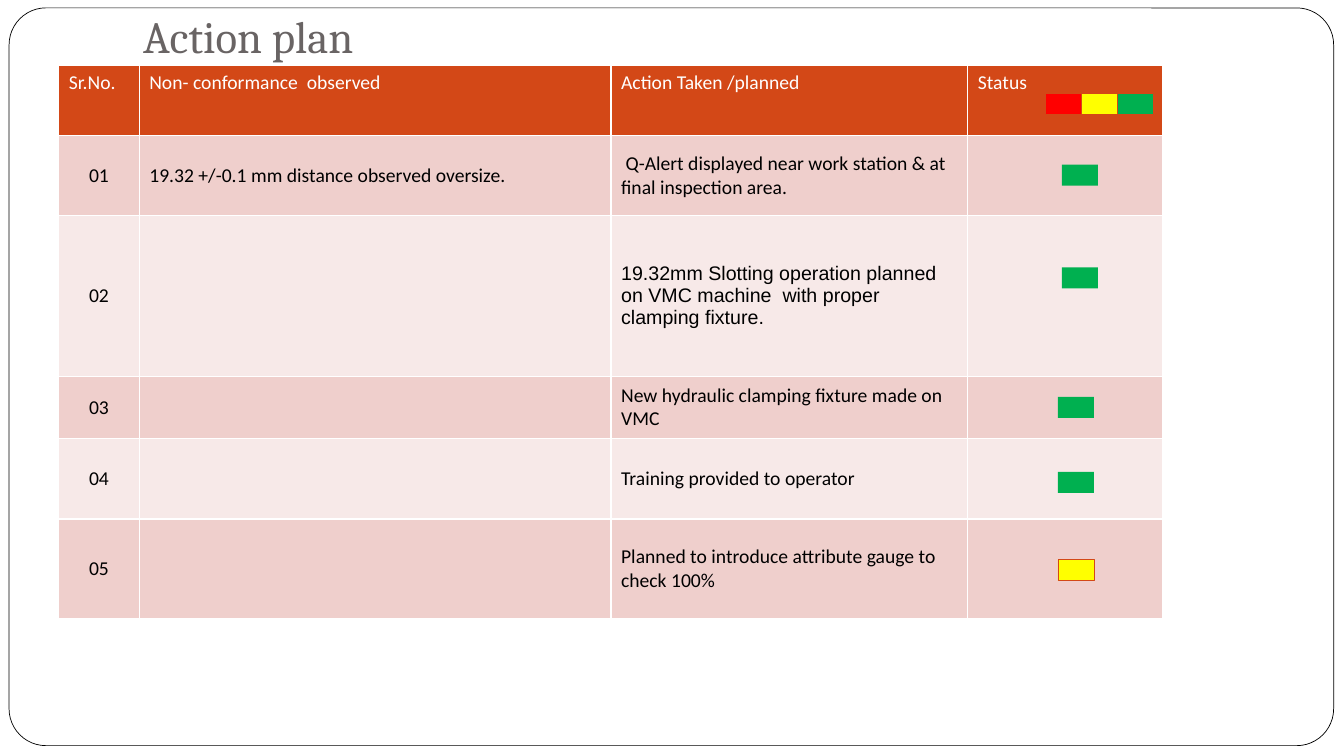
from dataclasses import dataclass
from itertools import accumulate

from pptx import Presentation
from pptx.dml.color import RGBColor as Rgb
from pptx.enum.shapes import MSO_SHAPE as Preset
from pptx.enum.text import MSO_ANCHOR as Anchor, PP_ALIGN as Align
from pptx.util import Cm, Pt


@dataclass(frozen=True)
class Theme:
    """Colours, fonts and type sizes of the slide."""
    white: Rgb = Rgb.from_string("FFFFFF")
    black: Rgb = Rgb.from_string("000000")
    heading: Rgb = Rgb.from_string("696464")
    accent: Rgb = Rgb.from_string("D34817")
    dark_band: Rgb = Rgb.from_string("EFCFCC")
    light_band: Rgb = Rgb.from_string("F7E9E8")
    red: Rgb = Rgb.from_string("FF0000")
    yellow: Rgb = Rgb.from_string("FFFF00")
    green: Rgb = Rgb.from_string("00B050")
    heading_font: str = "Cambria"
    body_font: str = "Calibri"
    slotting_font: str = "Arial"
    heading_size: Pt = Pt(32)
    body_size: Pt = Pt(14)
    hairline: Pt = Pt(0.5)


@dataclass(frozen=True)
class Action:
    """One row of the plan, with its status flag offset inside the status cell."""
    finding: str
    measure: str
    status: Rgb
    flag_x: float
    flag_y: float
    font: str
    outlined: bool = False


THEME = Theme()
HEADERS = ("Sr.No.", "Non- conformance  observed", "Action Taken /planned", "Status")
ACTIONS = (
    Action("19.32 +/-0.1 mm distance observed oversize.",
           " Q-Alert displayed near work station & at final inspection area.",
           THEME.green, 2.37, 0.74, THEME.body_font),
    Action("", "19.32mm Slotting operation planned on VMC machine  with proper clamping fixture.",
           THEME.green, 2.37, 1.3, THEME.slotting_font),
    Action("", "New hydraulic clamping fixture made on VMC",
           THEME.green, 2.27, 0.52, THEME.body_font),
    Action("", "Training provided to operator", THEME.green, 2.27, 0.84, THEME.body_font),
    Action("", "Planned to introduce attribute gauge to check 100%",
           THEME.yellow, 2.27, 1.02, THEME.body_font, True),
)
COLUMN_WIDTHS = (2.03, 11.89, 8.99, 4.92)
ROW_HEIGHTS = (1.75, 2.03, 4.04, 1.57, 2.03, 2.51)
FLAG_WIDTH, FLAG_HEIGHT = 0.91, 0.53


def add_frame(slide, left, top, width, height):
    """Draw the rounded outline around the slide."""
    frame = slide.shapes.add_shape(Preset.ROUNDED_RECTANGLE, Cm(left), Cm(top), Cm(width), Cm(height))
    frame.adjustments[0] = 0.05
    frame.shadow.inherit = False
    frame.fill.solid()
    frame.fill.fore_color.rgb = THEME.white
    frame.line.color.rgb = THEME.black
    frame.line.width = THEME.hairline


def style_paragraph(paragraph, font_name, size, colour):
    """Set the font of a whole paragraph."""
    font = paragraph.font
    font.name, font.size, font.bold = font_name, size, False
    font.color.rgb = colour


def add_heading(slide, left, top, width, height):
    """Write the slide heading, resting on the bottom of its box."""
    heading = slide.shapes.add_textbox(Cm(left), Cm(top), Cm(width), Cm(height)).text_frame
    heading.word_wrap = True
    heading.vertical_anchor = Anchor.BOTTOM
    heading.margin_bottom = Cm(0.25)
    heading.text = "Action plan"
    style_paragraph(heading.paragraphs[0], THEME.heading_font, THEME.heading_size, THEME.heading)


def add_flag(slide, left, top, colour, outlined):
    """Draw one status flag."""
    flag = slide.shapes.add_shape(Preset.RECTANGLE, Cm(left), Cm(top), Cm(FLAG_WIDTH), Cm(FLAG_HEIGHT))
    flag.shadow.inherit = False
    flag.fill.solid()
    flag.fill.fore_color.rgb = colour
    if outlined:
        flag.line.color.rgb = THEME.accent
        flag.line.width = THEME.hairline
    else:
        flag.line.fill.background()


def fill_cell(cell, wording, fill, colour, font_name):
    """Colour a table cell and write its text."""
    cell.fill.solid()
    cell.fill.fore_color.rgb = fill
    cell.text = wording
    style_paragraph(cell.text_frame.paragraphs[0], font_name, THEME.body_size, colour)


def add_plan(slide, left, top):
    """Build the table of actions."""
    plan = slide.shapes.add_table(
        len(ROW_HEIGHTS), len(COLUMN_WIDTHS), Cm(left), Cm(top),
        Cm(sum(COLUMN_WIDTHS)), Cm(sum(ROW_HEIGHTS))).table
    for column, width in zip(plan.columns, COLUMN_WIDTHS):
        column.width = Cm(width)
    for row, height in zip(plan.rows, ROW_HEIGHTS):
        row.height = Cm(height)
    for column, header in enumerate(HEADERS):
        fill_cell(plan.cell(0, column), header, THEME.accent, THEME.white, THEME.body_font)
    for number, action in enumerate(ACTIONS, 1):
        band = THEME.dark_band if number % 2 else THEME.light_band
        for column, wording in enumerate((f"{number:02}", action.finding, action.measure, "")):
            cell = plan.cell(number, column)
            font_name = action.font if column == 2 else THEME.body_font
            fill_cell(cell, wording, band, THEME.black, font_name)
            cell.vertical_anchor = Anchor.MIDDLE
        plan.cell(number, 0).text_frame.paragraphs[0].alignment = Align.CENTER


def add_status(slide, left, top):
    """Place the colour key and the row flags over the table's status column."""
    status_left = left + sum(COLUMN_WIDTHS[:-1])
    for place, colour in enumerate((THEME.red, THEME.yellow, THEME.green)):
        add_flag(slide, status_left + 1.96 + place * FLAG_WIDTH, top + 0.7, colour, True)
    for action, row_top in zip(ACTIONS, accumulate(ROW_HEIGHTS)):
        add_flag(slide, status_left + action.flag_x, top + row_top + action.flag_y,
                 action.status, action.outlined)


def main():
    """Build and save the action plan slide."""
    deck = Presentation()
    deck.slide_width, deck.slide_height = Cm(33.87), Cm(19.05)
    slide = deck.slides.add_slide(deck.slide_layouts[6])
    add_frame(slide, 0.23, 0.2, 33.38, 18.59)
    add_plan(slide, 1.48, 1.66)
    add_heading(slide, 3.36, 0.45, 28.78, 1.38)
    add_status(slide, 1.48, 1.66)
    deck.save("out.pptx")


if __name__ == "__main__":
    main()
